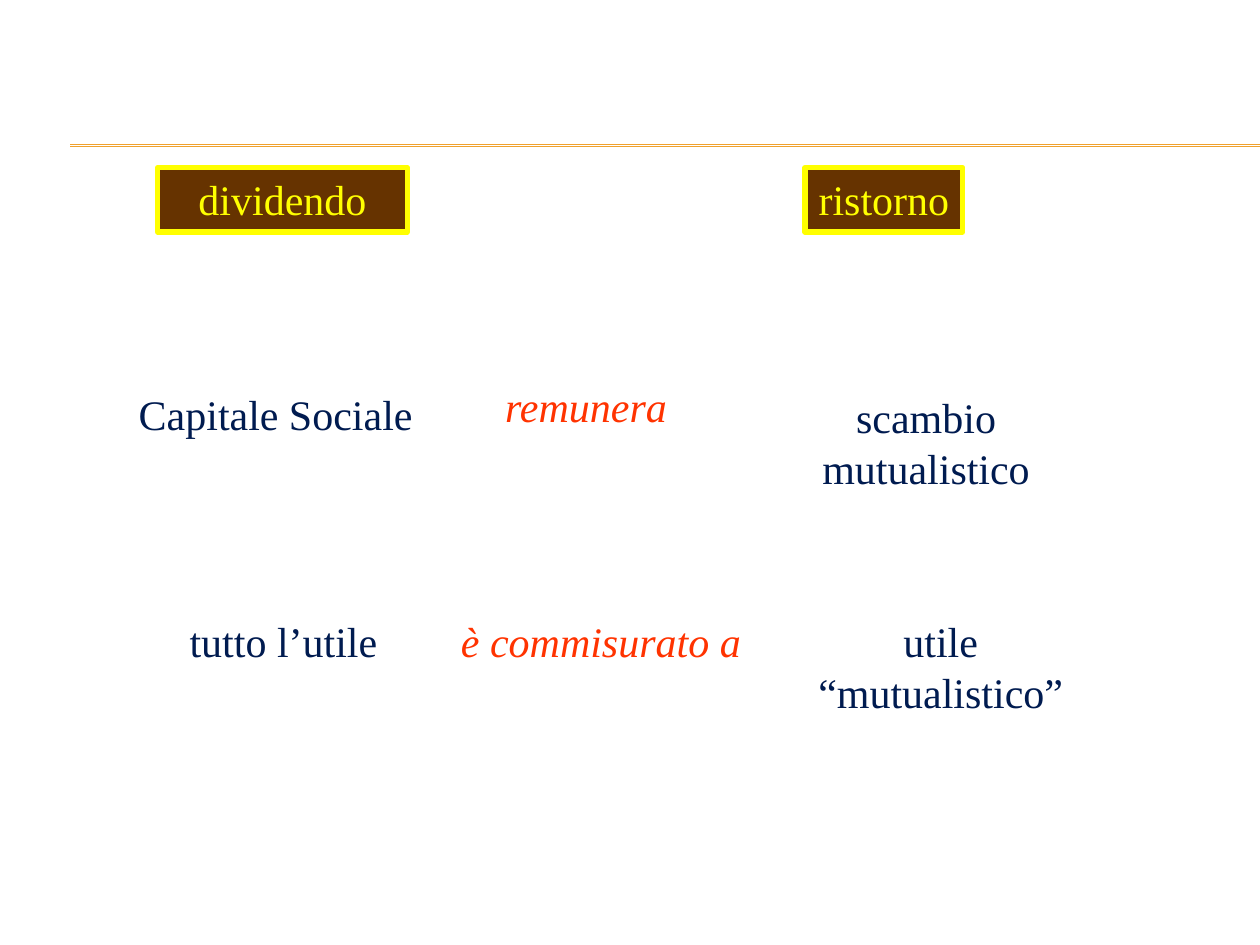
from lxml.etree import SubElement
from pptx import Presentation
from pptx.dml.color import RGBColor
from pptx.enum.shapes import MSO_CONNECTOR, MSO_SHAPE
from pptx.enum.text import MSO_ANCHOR, MSO_AUTO_SIZE, PP_ALIGN
from pptx.oxml.ns import qn
from pptx.util import Cm, Pt

HUES = {"rule": "F0A22E", "fill": "663300", "head": "FFFF00",
        "body": "001B50", "verb": "FF3300"}
HIGH = 1.3


def hue(name):
    """Return the named colour."""
    return RGBColor.from_string(HUES[name])


def write(shape, text, name, wrap, slant=False):
    """Put centred text in a shape."""
    frame = shape.text_frame
    frame.text = text
    frame.word_wrap = wrap
    frame.auto_size = MSO_AUTO_SIZE.SHAPE_TO_FIT_TEXT
    frame.vertical_anchor = MSO_ANCHOR.TOP
    para = frame.paragraphs[0]
    para.alignment = PP_ALIGN.CENTER
    for run in para.runs:
        font = run.font
        font.name = "Times New Roman"
        font.size = Pt(24)
        font.italic = slant
        font.color.rgb = hue(name)


def rule(slide, top):
    """Draw a thin rule that runs to the right edge."""
    line = slide.shapes.add_connector(
        MSO_CONNECTOR.STRAIGHT, Cm(1.42), Cm(top), Cm(25.4), Cm(top))
    line.line.color.rgb = hue("rule")
    line.line.width = Pt(0.75)
    SubElement(line._element.spPr, qn("a:effectLst"))


def head(slide, text, left, width, wrap):
    """Add a framed column heading."""
    box = slide.shapes.add_shape(
        MSO_SHAPE.RECTANGLE, Cm(left), Cm(3.38), Cm(width), Cm(HIGH))
    box.shadow.inherit = False
    box.fill.solid()
    box.fill.fore_color.rgb = hue("fill")
    box.line.color.rgb = hue("head")
    box.line.width = Pt(3)
    write(box, text, "head", wrap)


def label(slide, text, left, top, width, wrap, name="body"):
    """Add a plain label, slanted when it is a verb."""
    box = slide.shapes.add_textbox(Cm(left), Cm(top), Cm(width), Cm(HIGH))
    write(box, text, name, wrap, name == "verb")


def main():
    """Build and save the slide."""
    deck = Presentation()
    deck.slide_width, deck.slide_height = Cm(25.4), Cm(19.05)
    slide = deck.slides.add_slide(deck.slide_layouts[6])
    for top in (2.92, 2.95):
        rule(slide, top)
    head(slide, "dividendo", 3.18, 5.03, True)
    head(slide, "ristorno", 16.23, 3.18, False)
    low = 12.29
    label(slide, "tutto l’utile", 2.97, low, 5.49, True)
    label(slide, "utile\v“mutualistico”", 15.47, low, 6.99, False)
    label(slide, "Capitale Sociale", 2.18, 7.7, 6.76, True)
    label(slide, "scambio\vmutualistico", 14.86, 7.77, 7.62, False)
    label(slide, "è commisurato a", 8.94, low, 6.35, False, "verb")
    label(slide, "remunera", 9.53, 7.54, 4.57, True, "verb")
    deck.save("out.pptx")


if __name__ == "__main__":
    main()
